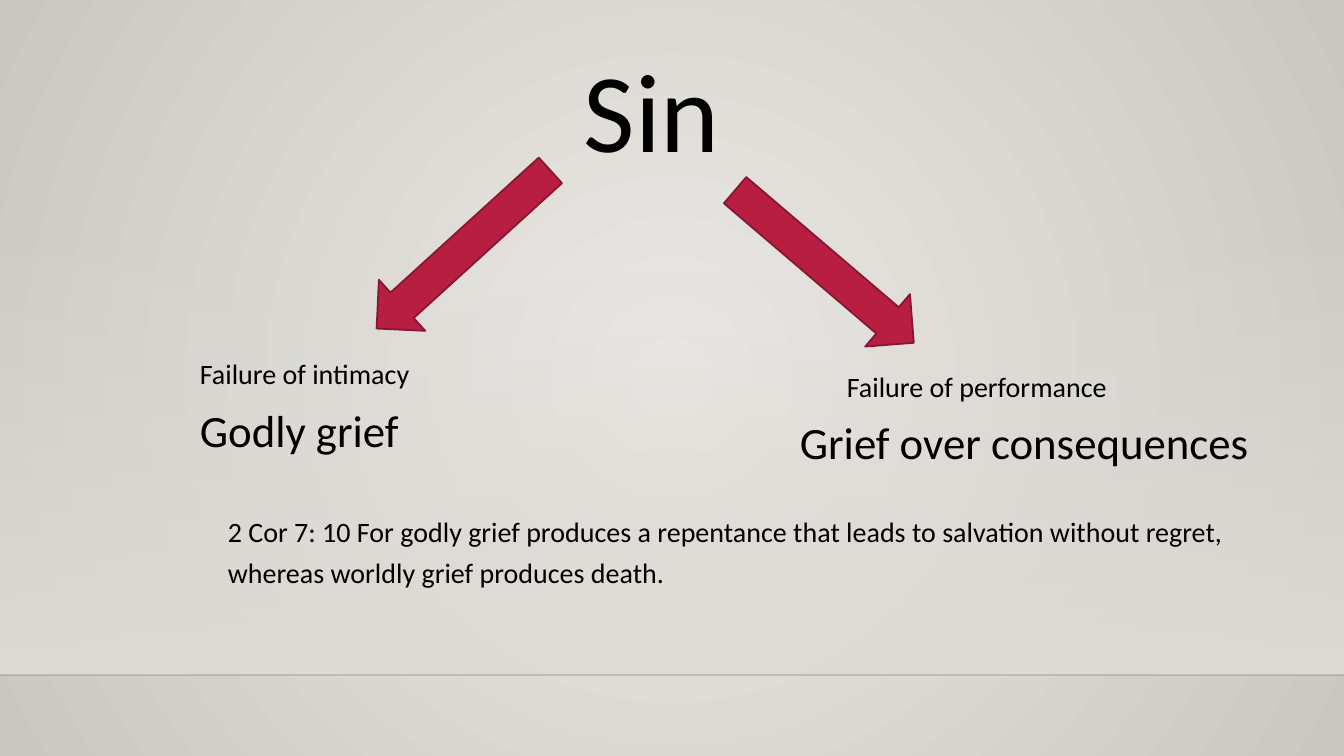
from lxml.etree import SubElement
from pptx import Presentation
from pptx.dml.color import RGBColor
from pptx.enum.shapes import MSO_CONNECTOR, MSO_SHAPE
from pptx.oxml.ns import qn
from pptx.util import Pt

PX = 12192000 / 1344
BLACK = RGBColor(0x00, 0x00, 0x00)
LINE = RGBColor(0x00, 0x00, 0x01)
CENTRE = RGBColor(0xEC, 0xEA, 0xE7)
EDGE = RGBColor(0xCA, 0xC7, 0xC1)
BAND = RGBColor(0xDF, 0xDB, 0xD5)
RED = RGBColor(0xB7, 0x1E, 0x42)
DARK_RED = RGBColor(0x87, 0x16, 0x31)


def px(*values):
    return [round(v * PX) for v in values]


def set_alpha(element, percent):
    color = next(element.iter(qn("a:srgbClr")))
    SubElement(color, qn("a:alpha")).set("val", str(percent * 1000))


prs = Presentation()
prs.slide_width, prs.slide_height = px(1344, 756)
s = prs.slides.add_slide(prs.slide_layouts[6])

fill = s.background.fill
fill.gradient()
for stop, color in zip(fill.gradient_stops, (CENTRE, EDGE)):
    stop.color.rgb = color
grad = next(s._element.iter(qn("a:gradFill")))
grad.remove(grad.find(qn("a:lin")))
circle = SubElement(grad, qn("a:path"))
circle.set("path", "circle")
focus = SubElement(circle, qn("a:fillToRect"))
for side in "ltrb":
    focus.set(side, "50000")

band = s.shapes.add_shape(MSO_SHAPE.RECTANGLE, *px(0, 223, 1344, 452))
band.shadow.inherit = False
band.line.fill.background()
band.fill.gradient()
band.fill.gradient_angle = 270
for stop in band.fill.gradient_stops:
    stop.color.rgb = BAND
set_alpha(band._element, 0)

floor = s.shapes.add_connector(MSO_CONNECTOR.STRAIGHT, *px(0, 675, 1344, 675))
floor.line.color.rgb = LINE
floor.line.width = Pt(1)
set_alpha(floor._element, 20)
SubElement(floor._element.spPr, qn("a:effectLst"))

for x, y, angle in ((429, 132, 47.7), (790, 149, 310.5)):
    sp = s.shapes.add_shape(MSO_SHAPE.DOWN_ARROW, *px(x, y, 69, 235))
    sp.rotation = angle
    sp.shadow.inherit = False
    sp.fill.solid()
    sp.fill.fore_color.rgb = RED
    sp.line.color.rgb = DARK_RED
    sp.line.width = Pt(1.25)

texts = (
    ("Sin", 574, 36, 369, 281, 80, 1),
    ("Failure of intimacy", 190, 352, 369, 44, 20, 1),
    ("Failure of performance", 837, 365, 369, 44, 20, 1),
    ("Godly grief", 190, 398, 413, 65, 32, 1),
    ("Grief over consequences", 790, 410, 499, 65, 32, 1),
    ("2 Cor 7: 10 For godly grief produces a repentance that leads to salvation "
     "without regret, whereas worldly grief produces death.", 218, 503, 1113, 94, 20, 1.2),
)
for text, x, y, w, h, size, spacing in texts:
    tf = s.shapes.add_textbox(*px(x, y, w, h)).text_frame
    tf.word_wrap = True
    tf.text = text
    p = tf.paragraphs[0]
    p.line_spacing = float(spacing)
    r = p.runs[0]
    r.font.name = "Calibri"
    r.font.size = Pt(size)
    r.font.color.rgb = BLACK

prs.save("out.pptx")
